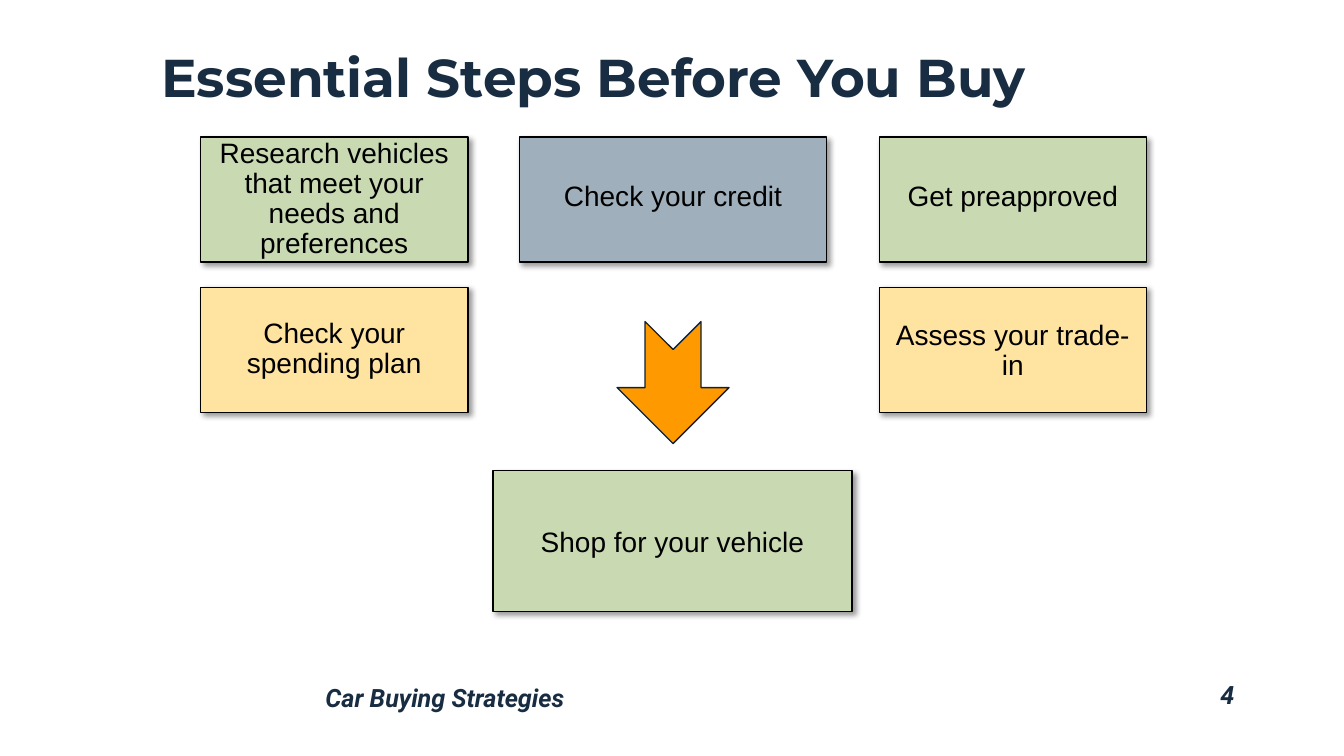
from lxml import etree
from pptx import Presentation
from pptx.dml.color import RGBColor
from pptx.enum import shapes, text
from pptx.oxml import ns
from pptx.util import Inches, Pt

TITLE = "Essential Steps Before You Buy"
FOOTER = "Car Buying Strategies"
PAGE_NUMBER = "4"

THEME = {
    "navy": "182C42", "black": "000000", "green": "C9DAB3", "slate": "9FAFBB",
    "yellow": "FEE3A1", "orange": "FF9900", "arrow_line": "122131",
    "title_font": "Montserrat", "step_font": "Arial", "footer_font": "Roboto",
    "title_size": 38, "step_size": 20, "footer_size": 18,
}

SIDE_WIDTH = 2.65
LEFT, RIGHT = 1.99, 8.72
UPPER, LOWER = 1.36, 2.85
ROW_HEIGHT = 1.24

STEPS = [
    ("Research vehicles that meet your needs and preferences", "green",
     (LEFT, UPPER, SIDE_WIDTH, ROW_HEIGHT), 0),
    ("Check your credit", "slate", (5.15, UPPER, 3.05, ROW_HEIGHT), -0.02),
    ("Get preapproved", "green", (RIGHT, UPPER, SIDE_WIDTH, ROW_HEIGHT), -0.02),
    ("Check your spending plan", "yellow", (LEFT, LOWER, SIDE_WIDTH, ROW_HEIGHT), 0),
    ("Assess your trade-in", "yellow", (RIGHT, LOWER, SIDE_WIDTH, ROW_HEIGHT), 0.02),
    ("Shop for your vehicle", "green", (4.89, 4.67, 3.56, 1.4), 0.02),
]
ARROW = (6.07, 3.24, 1.21, 1.11)


def color(name):
    return RGBColor.from_string(THEME[name])


def set_all(target, values):
    for name, value in values.items():
        setattr(target, name, value)


def write(frame, words, role, ink, align, **font):
    frame.word_wrap = True
    para = frame.paragraphs[0]
    set_all(para, {"alignment": align, "line_spacing": 0.9, "space_before": Pt(0)})
    span = para.add_run()
    span.text = words
    set_all(span.font, {"name": THEME[role + "_font"],
                        "size": Pt(THEME[role + "_size"]), **font})
    span.font.color.rgb = color(ink)


def paint(shape, fill, line):
    shape.shadow.inherit = False
    shape.fill.solid()
    shape.fill.fore_color.rgb = color(fill)
    shape.line.color.rgb = color(line)
    shape.line.width = Pt(1)


def cast_shadow(shape):
    effects = shape._element.spPr.find(ns.qn("a:effectLst"))
    shadow = etree.SubElement(effects, ns.qn("a:outerShdw"), blurRad=str(Pt(4)),
                              dist=str(Pt(3)), dir="2700000", algn="tl", rotWithShape="0")
    tint = etree.SubElement(shadow, ns.qn("a:srgbClr"), val=THEME["black"])
    etree.SubElement(tint, ns.qn("a:alpha"), val="40000")


def add_step(page, words, fill, place, nudge):
    box = page.shapes.add_shape(shapes.MSO_SHAPE.RECTANGLE, *map(Inches, place))
    paint(box, fill, "black")
    cast_shadow(box)
    set_all(box.text_frame, {
        "vertical_anchor": text.MSO_ANCHOR.MIDDLE,
        "margin_left": Inches(0.15), "margin_right": Inches(0.15),
        "margin_top": Inches(max(2 * nudge, 0)),
        "margin_bottom": Inches(max(-2 * nudge, 0)),
    })
    write(box.text_frame, words, "step", "black", text.PP_ALIGN.CENTER)


def main():
    deck = Presentation()
    set_all(deck, {"slide_width": Inches(13.33), "slide_height": Inches(7.5)})
    page = deck.slides.add_slide(deck.slide_layouts[5])

    title = page.shapes.title
    set_all(title, {"left": Inches(1.5), "top": Inches(0.11),
                    "width": Inches(10.84), "height": Inches(1.02)})
    set_all(title.text_frame, {"vertical_anchor": text.MSO_ANCHOR.BOTTOM,
                               "auto_size": text.MSO_AUTO_SIZE.NONE})
    write(title.text_frame, TITLE, "title", "navy", text.PP_ALIGN.LEFT, bold=True)

    for step in STEPS:
        add_step(page, *step)

    arrow = page.shapes.add_shape(shapes.MSO_SHAPE.NOTCHED_RIGHT_ARROW, *map(Inches, ARROW))
    arrow.rotation = 90
    paint(arrow, "orange", "arrow_line")

    for words, left, top, width, align in (
        (FOOTER, 3.13, 6.75, 7.63, text.PP_ALIGN.LEFT),
        (PAGE_NUMBER, 10.76, 6.72, 1.58, text.PP_ALIGN.RIGHT),
    ):
        box = page.shapes.add_textbox(*map(Inches, (left, top, width, 0.38)))
        write(box.text_frame, words, "footer", "navy", align, bold=True, italic=True)

    deck.save("out.pptx")


if __name__ == "__main__":
    main()
